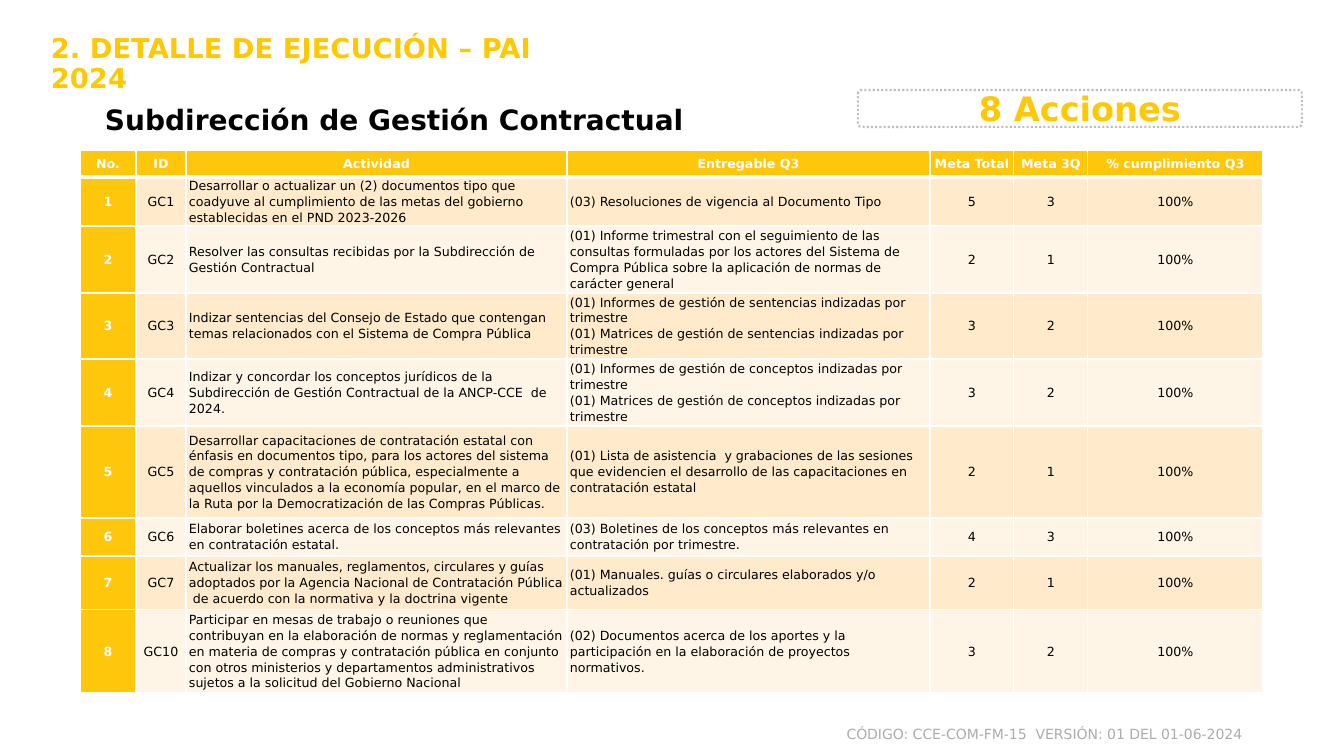
from lxml import etree
from pptx import Presentation
from pptx.dml.color import RGBColor
from pptx.enum import dml, shapes, text
from pptx.oxml.ns import qn
from pptx.util import Emu, Pt

TITLE = "2. DETALLE DE EJECUCIÓN – PAI 2024"
AREA = "Subdirección de Gestión Contractual"
COUNT = "8 Acciones"
CODE = "CÓDIGO: CCE-COM-FM-15\u00a0 VERSIÓN: 01 DEL 01-06-2024"

HEADS = ["No.", "ID", "Actividad", "Entregable Q3", "Meta Total", "Meta 3Q",
         "% cumplimiento Q3"]
# id, activity, deliverable, total goal, Q3 goal
ACTIONS = [
    ("GC1", "Desarrollar o actualizar un (2) documentos tipo que coadyuve al "
     "cumplimiento de las metas del gobierno establecidas en el PND 2023-2026",
     "(03) Resoluciones de vigencia al Documento Tipo", 5, 3),
    ("GC2", "Resolver las consultas recibidas por la Subdirección de Gestión Contractual",
     "(01) Informe trimestral con el seguimiento de las consultas formuladas por los "
     "actores del Sistema de Compra Pública sobre la aplicación de normas de "
     "carácter general", 2, 1),
    ("GC3", "Indizar sentencias del Consejo de Estado que contengan temas "
     "relacionados con el Sistema de Compra Pública",
     "(01) Informes de gestión de sentencias indizadas por trimestre\n"
     "(01) Matrices de gestión de sentencias indizadas por trimestre", 3, 2),
    ("GC4", "Indizar y concordar los conceptos jurídicos de la Subdirección de "
     "Gestión Contractual de la ANCP-CCE  de 2024.",
     "(01) Informes de gestión de conceptos indizadas por trimestre\n"
     "(01) Matrices de gestión de conceptos indizadas por trimestre", 3, 2),
    ("GC5", "Desarrollar capacitaciones de contratación estatal con énfasis en "
     "documentos tipo, para los actores del sistema de compras y contratación "
     "pública, especialmente a aquellos vinculados a la economía popular, en el "
     "marco de la Ruta por la Democratización de las Compras Públicas.",
     "(01) Lista de asistencia  y grabaciones de las sesiones que evidencien el "
     "desarrollo de las capacitaciones en contratación estatal", 2, 1),
    ("GC6", "Elaborar boletines acerca de los conceptos más relevantes en "
     "contratación estatal.",
     "(03) Boletines de los conceptos más relevantes en contratación por trimestre.",
     4, 3),
    ("GC7", "Actualizar los manuales, reglamentos, circulares y guías adoptados por "
     "la Agencia Nacional de Contratación Pública  de acuerdo con la normativa y la "
     "doctrina vigente",
     "(01) Manuales. guías o circulares elaborados y/o actualizados", 2, 1),
    ("GC10", "Participar en mesas de trabajo o reuniones que contribuyan en la "
     "elaboración de normas y reglamentación en materia de compras y contratación "
     "pública en conjunto con otros ministerios y departamentos administrativos "
     "sujetos a la solicitud del Gobierno Nacional",
     "(02) Documentos acerca de los aportes y la participación en la elaboración de "
     "proyectos normativos.", 3, 2),
]
DONE = "100%"

COLS = [56, 50, 381, 363, 84, 74, 175]
ROWS = [27, 49, 67, 66, 67, 92, 38, 54, 83]
PROSE = (2, 3)  # left-aligned columns

FONT = "DejaVu Sans"
GOLD = RGBColor(0xFF, 0xC8, 0x02)
AMBER = RGBColor(0xFE, 0xC7, 0x0C)
PEACH = RGBColor(0xFF, 0xEB, 0xCC)
CREAM = RGBColor(0xFF, 0xF5, 0xE7)
WHITE = RGBColor(0xFF, 0xFF, 0xFF)
BLACK = RGBColor(0, 0, 0)
GREY = RGBColor(0xAF, 0xAB, 0xAB)
SILVER = RGBColor(0xBF, 0xBF, 0xBF)
LEFT, MID, RIGHT = text.PP_ALIGN.LEFT, text.PP_ALIGN.CENTER, text.PP_ALIGN.RIGHT


def px(n):
    return Emu(round(n * 914400 / 100.8))


def write(frame, words, size, color, bold=False, align=LEFT):
    frame.word_wrap = True
    para = frame.paragraphs[0]
    para.text = words
    para.alignment = align
    font = para.font
    font.name, font.size, font.bold = FONT, Pt(size), bold
    font.color.rgb = color
    return para


def label(slide, box, words, size, color, bold=False, align=LEFT):
    area = slide.shapes.add_textbox(*map(px, box))
    return write(area.text_frame, words, size, color, bold, align)


def edge(cell, widths):
    """Draw white borders; widths are in points: left, right, top, bottom."""
    props = cell._tc.get_or_add_tcPr()
    for i, (side, width) in enumerate(zip("LRTB", widths)):
        line = etree.Element(qn("a:ln" + side), w=str(Pt(width)))
        fill = etree.SubElement(line, qn("a:solidFill"))
        etree.SubElement(fill, qn("a:srgbClr"), val=str(WHITE))
        props.insert(i, line)


def fill_cell(cell, row, col, words):
    strong = row == 0 or col == 0
    cell.fill.solid()
    cell.fill.fore_color.rgb = AMBER if strong else PEACH if row % 2 else CREAM
    cell.margin_left = cell.margin_right = px(3)
    cell.margin_top = cell.margin_bottom = 0
    cell.vertical_anchor = text.MSO_ANCHOR.MIDDLE
    align = LEFT if row and col in PROSE else MID
    para = write(cell.text_frame, words, 9, WHITE if strong else BLACK, strong, align)
    para.line_spacing = 1.07
    para.space_after = Pt(8)
    edge(cell, (1, 1, 3 if row == 1 else 1, 3 if row == 0 else 1))


def add_grid(slide):
    data = [HEADS] + [(n, *act, DONE) for n, act in enumerate(ACTIONS, 1)]
    grid = slide.shapes.add_table(len(ROWS), len(COLS), px(80), px(150),
                                  px(sum(COLS)), px(sum(ROWS))).table
    grid.horz_banding = False
    for col, width in zip(grid.columns, COLS):
        col.width = px(width)
    for r, (row, height) in enumerate(zip(grid.rows, ROWS)):
        row.height = px(height)
        for c, words in enumerate(data[r]):
            fill_cell(grid.cell(r, c), r, c, str(words))


def add_badge(slide):
    badge = slide.shapes.add_shape(shapes.MSO_SHAPE.ROUNDED_RECTANGLE,
                                   *map(px, (858, 90, 444, 37)))
    badge.adjustments[0] = 0.1
    badge.shadow.inherit = False
    badge.fill.background()
    badge.line.color.rgb = SILVER
    badge.line.width = Pt(1.5)
    badge.line.dash_style = dml.MSO_LINE.ROUND_DOT
    badge.text_frame.vertical_anchor = text.MSO_ANCHOR.MIDDLE
    write(badge.text_frame, COUNT, 24, GOLD, True, MID)


def main():
    deck = Presentation()
    deck.slide_width, deck.slide_height = px(1344), px(756)
    slide = deck.slides.add_slide(deck.slide_layouts[6])
    label(slide, (484, 721, 768, 27), CODE, 10, GREY, align=RIGHT)
    label(slide, (95, 98, 834, 44), AREA, 20, BLACK, True)
    add_badge(slide)
    title = label(slide, (41, 30, 555, 79), TITLE, 19.5, GOLD, True)
    title.line_spacing = 0.9
    add_grid(slide)
    deck.save("out.pptx")


if __name__ == "__main__":
    main()
